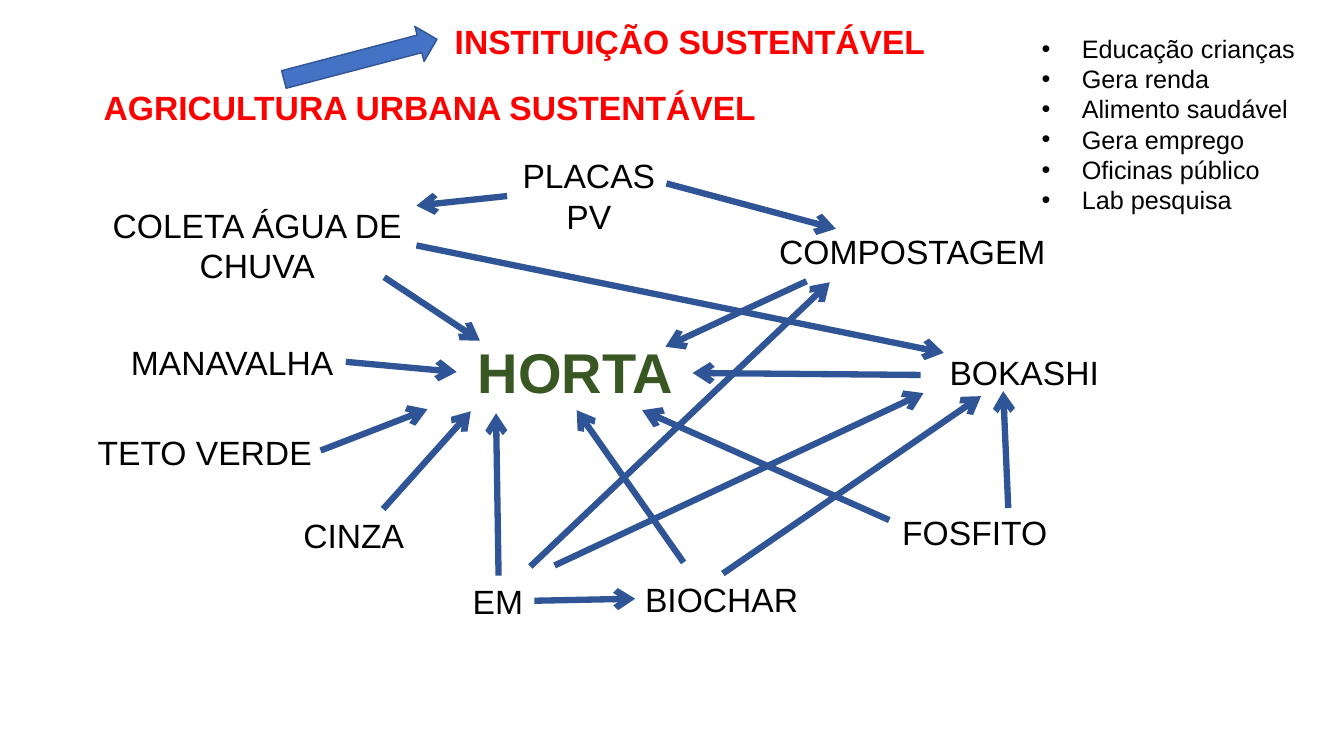
from pptx import Presentation
from pptx.dml.color import RGBColor
from pptx.enum.shapes import MSO_CONNECTOR, MSO_SHAPE
from pptx.enum.text import MSO_ANCHOR, MSO_AUTO_SIZE, PP_ALIGN
from pptx.oxml.ns import qn
from pptx.util import Inches, Pt
from lxml.etree import SubElement

BLACK = RGBColor(0x00, 0x00, 0x00)
RED = RGBColor(0xFF, 0x00, 0x00)
GREEN = RGBColor(0x38, 0x57, 0x23)
NAVY = RGBColor(0x2F, 0x55, 0x97)
BLUE = RGBColor(0x44, 0x72, 0xC4)
EDGE = RGBColor(0x32, 0x54, 0x91)


def place(shape, left, top, width, height):
    shape.left, shape.top = Inches(left), Inches(top)
    shape.width, shape.height = Inches(width), Inches(height)


def style(par, size, color, bold=False):
    for run in par.runs:
        run.font.name = "Arial"
        run.font.size = Pt(size)
        run.font.bold = bold
        run.font.color.rgb = color


prs = Presentation()
prs.slide_width, prs.slide_height = Inches(13.33), Inches(7.5)
slide = prs.slides.add_slide(prs.slide_layouts[1])
shapes = slide.shapes

# Headings
title = shapes.title
place(title, 4.41, 0.2, 5.19, 0.56)
theme = shapes.add_textbox(Inches(0.93), Inches(0.86), Inches(7.07), Inches(0.56))
for box, text in ((title, "INSTITUIÇÃO SUSTENTÁVEL"),
                  (theme, "AGRICULTURA URBANA SUSTENTÁVEL")):
    frame = box.text_frame
    frame.text = text
    frame.word_wrap = True
    frame.auto_size = MSO_AUTO_SIZE.NONE
    frame.vertical_anchor = MSO_ANCHOR.TOP
    par = frame.paragraphs[0]
    par.alignment = PP_ALIGN.LEFT
    par.line_spacing = 0.9
    style(par, 24, RED, True)

# Benefits list
body = slide.placeholders[1]
place(body, 10.23, 0.28, 2.81, 2.05)
frame = body.text_frame
frame.text = "\n".join(["Educação crianças", "Gera renda", "Alimento saudável",
                        "Gera emprego", "Oficinas público", "Lab pesquisa"])
frame.auto_size = MSO_AUTO_SIZE.NONE
frame.vertical_anchor = MSO_ANCHOR.TOP
for par in frame.paragraphs:
    par.space_before = Pt(0)
    props = par._p.get_or_add_pPr()
    props.set("marL", str(Inches(0.4)))
    props.set("indent", str(Inches(-0.4)))
    SubElement(props, qn("a:buFont")).set("typeface", "Arial")
    SubElement(props, qn("a:buChar")).set("char", "•")
    style(par, 18, BLACK)

# Topics: text, left, top, width, height
topics = [
    ("HORTA", 4.64, 3.3, 2.15, 0.77),
    ("COLETA ÁGUA DE CHUVA", 0.97, 1.98, 3.16, 0.91),
    ("PLACAS PV", 5.03, 1.49, 1.62, 0.91),
    ("COMPOSTAGEM", 7.63, 2.24, 2.87, 0.5),
    ("BOKASHI", 9.32, 3.44, 1.7, 0.5),
    ("FOSFITO", 8.85, 5.03, 1.65, 0.5),
    ("BIOCHAR", 6.3, 5.69, 1.74, 0.5),
    ("CINZA", 2.91, 5.06, 1.21, 0.5),
    ("EM", 4.59, 5.71, 0.71, 0.5),
    ("MANAVALHA", 1.2, 3.34, 2.23, 0.5),
    ("TETO VERDE", 0.87, 4.24, 2.35, 0.5),
]
boxes = {}
for text, *area in topics:
    box = shapes.add_textbox(*map(Inches, area))
    frame = box.text_frame
    frame.text = text
    frame.auto_size = MSO_AUTO_SIZE.SHAPE_TO_FIT_TEXT
    par = frame.paragraphs[0]
    frame.word_wrap = area[3] == 0.91
    if frame.word_wrap:
        par.alignment = PP_ALIGN.CENTER
    if text == "HORTA":
        style(par, 40, GREEN, True)
    else:
        style(par, 24, BLACK)
    boxes[text] = box

# Arrows: start point, end point, topic and side joined at start and at end
links = [
    (5.03, 1.94, 4.13, 2.04, ("PLACAS PV", 1), None),
    (6.61, 1.82, 8.29, 2.27, None, None),
    (3.81, 2.75, 4.76, 3.38, None, None),
    (4.13, 2.44, 9.36, 3.5, ("COLETA ÁGUA DE CHUVA", 3), None),
    (8, 2.79, 6.6, 3.44, None, None),
    (9.13, 3.72, 6.87, 3.7, None, None),
    (4.94, 5.71, 4.92, 4.1, ("EM", 0), None),
    (5.26, 5.62, 8.23, 2.8, None, None),
    (5.5, 5.61, 9.16, 3.9, None, None),
    (5.3, 5.97, 6.3, 5.94, ("EM", 3), ("BIOCHAR", 1)),
    (6.78, 5.58, 5.72, 4.07, None, None),
    (7.16, 5.69, 9.73, 3.93, ("BIOCHAR", 0), None),
    (8.82, 5.16, 6.37, 4.07, None, None),
    (10, 5.04, 9.95, 3.88, None, None),
    (3.8, 5.05, 4.67, 4.08, None, None),
    (3.43, 3.6, 4.53, 3.69, ("MANAVALHA", 3), None),
    (3.18, 4.47, 4.24, 4.06, None, None),
]
for *ends, start, stop in links:
    link = shapes.add_connector(MSO_CONNECTOR.STRAIGHT, *map(Inches, ends))
    if start:
        link.begin_connect(boxes[start[0]], start[1])
    if stop:
        link.end_connect(boxes[stop[0]], stop[1])
    link.line.color.rgb = NAVY
    link.line.width = Pt(4.5)
    SubElement(link.line._get_or_add_ln(), qn("a:tailEnd")).set("type", "arrow")
    SubElement(link._element.spPr, qn("a:effectLst"))

# Block arrow between the headings
arrow = shapes.add_shape(MSO_SHAPE.RIGHT_ARROW, Inches(2.79), Inches(0.41),
                         Inches(1.57), Inches(0.36))
arrow.rotation = 345.3
arrow.shadow.inherit = False
arrow.fill.solid()
arrow.fill.fore_color.rgb = BLUE
arrow.line.color.rgb = EDGE
arrow.line.width = Pt(1)

prs.save("out.pptx")
